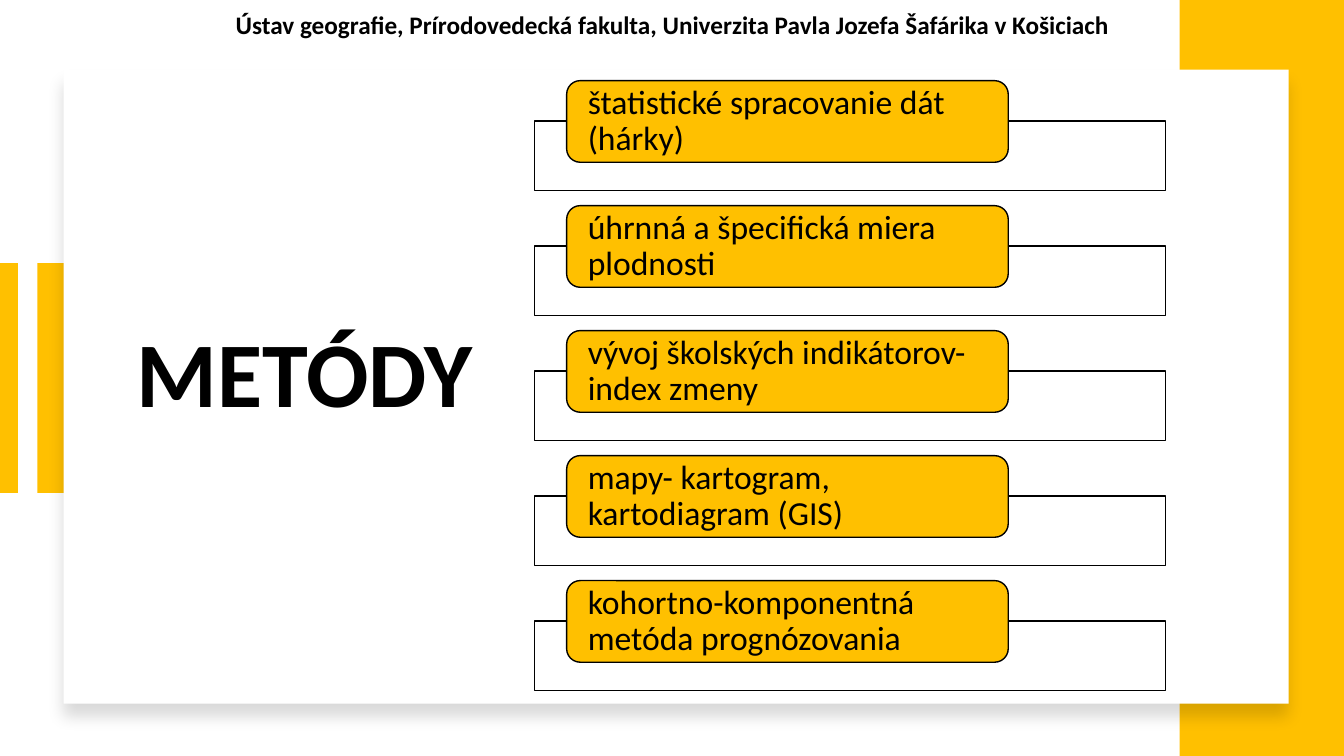
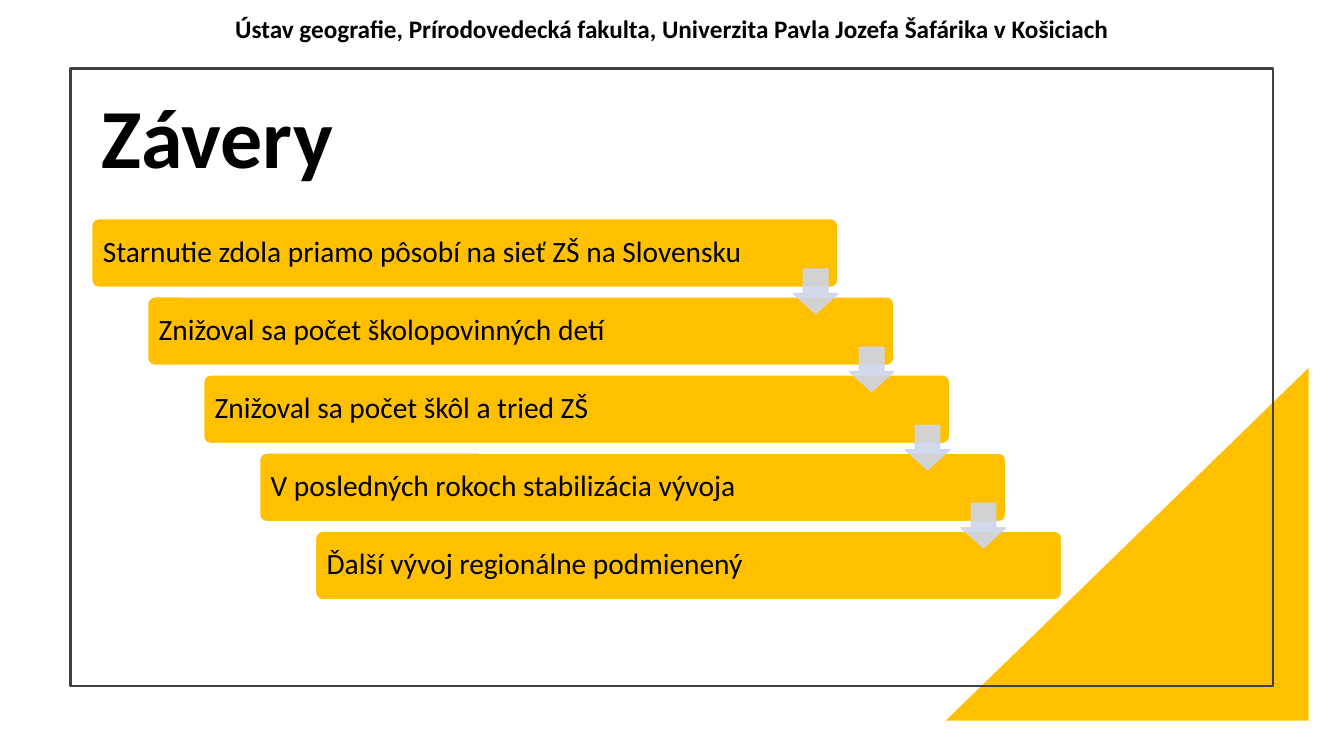
"""Two slides on school demography: the methods used and the conclusions."""
from lxml.etree import SubElement
from pptx import Presentation
from pptx.dml.color import RGBColor
from pptx.enum.shapes import MSO_CONNECTOR, MSO_SHAPE as SHAPE
from pptx.enum.text import MSO_ANCHOR as ANCHOR, PP_ALIGN as ALIGN
from pptx.oxml.ns import qn
from pptx.util import Inches, Pt

GOLD = RGBColor(0xFF, 0xC0, 0x00)
WHITE = RGBColor(0xFF, 0xFF, 0xFF)
BLACK = RGBColor(0x00, 0x00, 0x00)
CHARCOAL = RGBColor(0x40, 0x40, 0x40)
LAVENDER = RGBColor(0xCF, 0xD5, 0xEA)
FONT = "Calibri"
INSTITUTE = "Ústav geografie, Prírodovedecká fakulta, Univerzita Pavla Jozefa Šafárika v Košiciach"


def add_block(slide, kind, box, fill=None, line=None, line_width=1):
    block = slide.shapes.add_shape(kind, *map(Inches, box))
    block.shadow.inherit = False
    if fill is None:
        block.fill.background()
    else:
        block.fill.solid()
        block.fill.fore_color.rgb = fill
    if line is None:
        block.line.fill.background()
    else:
        block.line.color.rgb = line
        block.line.width = Pt(line_width)
    return block


def write(holder, text, size, bold=False, align=ALIGN.LEFT, spacing=0.9, insets=(0.1, 0.05)):
    frame = holder.text_frame
    frame.word_wrap = True
    frame.vertical_anchor = ANCHOR.MIDDLE
    frame.margin_left = frame.margin_right = Inches(insets[0])
    frame.margin_top = frame.margin_bottom = Inches(insets[1])
    frame.text = text
    paragraph = frame.paragraphs[0]
    paragraph.alignment = align
    paragraph.line_spacing = spacing
    font = paragraph.runs[0].font
    font.name, font.size, font.bold = FONT, Pt(size), bold
    font.color.rgb = BLACK


deck = Presentation()
deck.slide_width, deck.slide_height = Inches(13.33), Inches(7.5)
methods, conclusions = [deck.slides.add_slide(deck.slide_layouts[6]) for _ in range(2)]

add_block(methods, SHAPE.RECTANGLE, (0.37, 2.61, 0.34, 2.28), GOLD)
edge_bar = methods.shapes.add_connector(
    MSO_CONNECTOR.STRAIGHT, Inches(0.08), Inches(2.61), Inches(0.08), Inches(4.89))
edge_bar.line.color.rgb = GOLD
edge_bar.line.width = Pt(14)
SubElement(edge_bar._element.spPr, qn("a:effectLst"))
add_block(methods, SHAPE.RECTANGLE, (11.7, 0, 1.63, 7.5), GOLD)

card = add_block(methods, SHAPE.RECTANGLE, (0.63, 0.69, 12.15, 6.29), WHITE)
card_shadow = SubElement(
    card._element.spPr.find(qn("a:effectLst")), qn("a:outerShdw"),
    blurRad=str(Pt(11)), dist=str(Pt(10)), dir="5400000", algn="t", rotWithShape="0")
shadow_colour = SubElement(card_shadow, qn("a:srgbClr"), val=str(BLACK))
SubElement(shadow_colour, qn("a:alpha"), val="15000")

METHODS = [
    "štatistické spracovanie dát (hárky)",
    "úhrnná a špecifická miera plodnosti",
    "vývoj školských indikátorov- index zmeny",
    "mapy- kartogram, kartodiagram (GIS)",
    "kohortno-komponentná metóda prognózovania",
]
for row, method in enumerate(METHODS):
    top = 0.8 + 1.24 * row
    add_block(methods, SHAPE.RECTANGLE, (5.3, top + 0.4, 6.26, 0.69), WHITE, BLACK)
    label = add_block(methods, SHAPE.ROUNDED_RECTANGLE, (5.62, top, 4.38, 0.81), GOLD, BLACK)
    write(label, method, 24, insets=(0.17, 0))

add_block(conclusions, SHAPE.RIGHT_TRIANGLE, (9.38, 3.65, 3.6, 3.5), GOLD)._element.spPr.xfrm.set("flipH", "1")
add_block(conclusions, SHAPE.RECTANGLE, (0.7, 0.68, 11.93, 6.13), line=CHARCOAL, line_width=1.5)

CONCLUSIONS = [
    "Starnutie zdola priamo pôsobí na sieť ZŠ na Slovensku",
    "Znižoval sa počet školopovinných detí",
    "Znižoval sa počet škôl a tried ZŠ",
    "V posledných rokoch stabilizácia vývoja",
    "Ďalší vývoj regionálne podmienený",
]
STEP_X, STEP_Y = 0.555, 0.775
for step, conclusion in enumerate(CONCLUSIONS):
    stair = add_block(
        conclusions, SHAPE.ROUNDED_RECTANGLE,
        (0.91 + STEP_X * step, 2.17 + STEP_Y * step, 7.4, 0.68), GOLD, WHITE)
    stair.adjustments[0] = 0.1
    write(stair, conclusion, 21, insets=(0.09, 0.09))

for step in range(len(CONCLUSIONS) - 1):
    arrow = add_block(
        conclusions, SHAPE.DOWN_ARROW,
        (7.87 + STEP_X * step, 2.67 + STEP_Y * step, 0.44, 0.44), LAVENDER, LAVENDER)
    arrow.adjustments[0], arrow.adjustments[1] = 0.55, 0.45
    for colour in arrow._element.spPr.iter(qn("a:srgbClr")):
        SubElement(colour, qn("a:alpha"), val="90000")

for slide, title, size, title_box, banner_box in [
    (methods, "METÓDY", 66, (1.26, 1.19, 4.38, 5.12), (2.01, 0.04, 9.32, 0.4)),
    (conclusions, "Závery", 60, (0.91, 0.68, 11.5, 1.45), (1.73, 0.08, 9.87, 0.4)),
]:
    write(slide.shapes.add_textbox(*map(Inches, title_box)), title, size, bold=True)
    write(slide.shapes.add_textbox(*map(Inches, banner_box)), INSTITUTE, 18,
          bold=True, align=ALIGN.CENTER, spacing=1.0)

deck.save("out.pptx")
